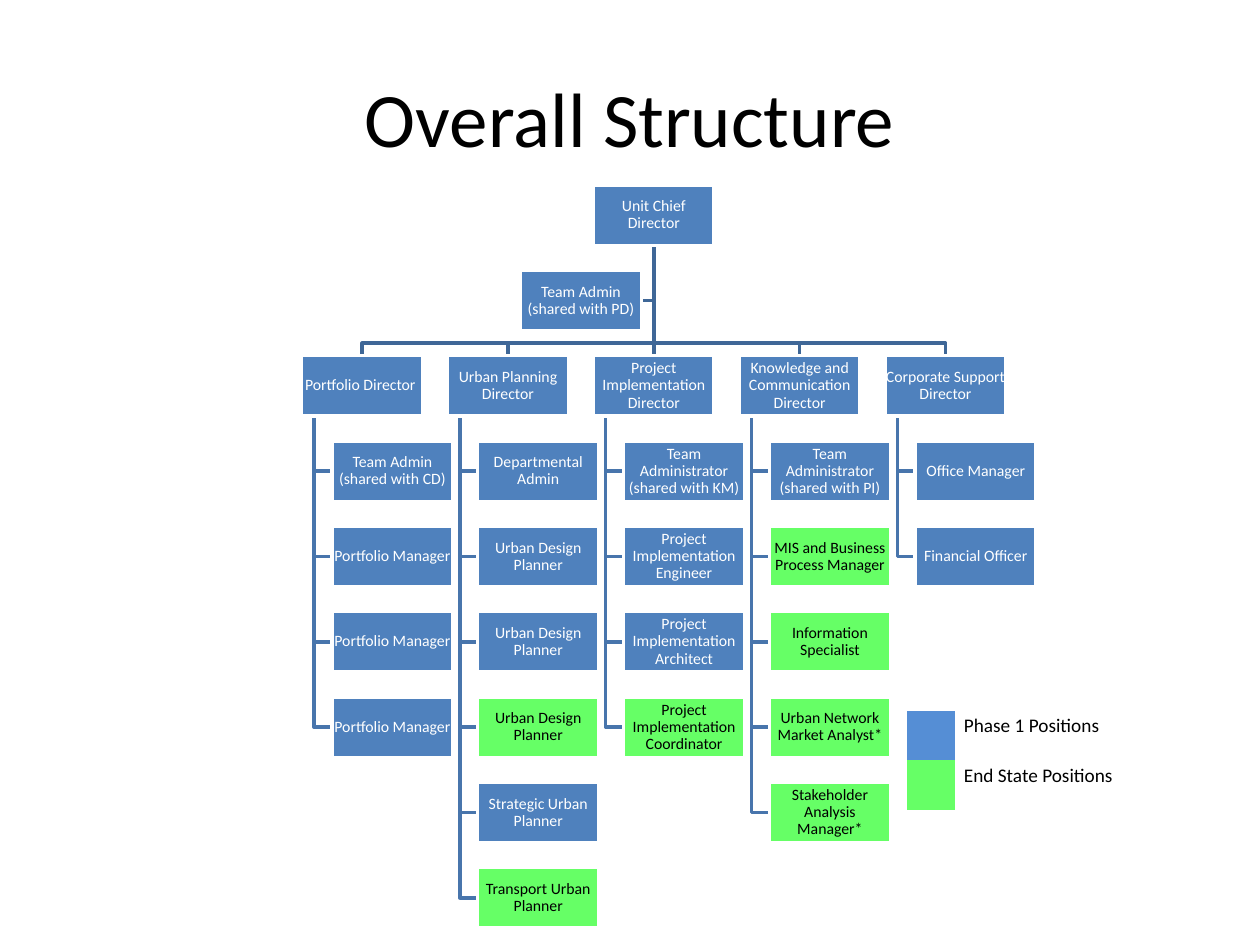
"""Build the organisation chart slide of the overall structure."""
from dataclasses import dataclass
from itertools import pairwise
from typing import NamedTuple

from lxml import etree
from pptx import Presentation
from pptx import util as u
from pptx.dml.color import RGBColor
from pptx.enum import shapes, text
from pptx.oxml import ns


@dataclass(frozen=True)
class Theme:
    font: str = "Calibri"
    title_size: float = 44
    box_size: float = 9
    legend_size: float = 11
    line_width: float = 2
    dark: str = "000000"
    light: str = "FFFFFF"
    phase_one: str = "4F81BD"
    end_state: str = "66FF66"
    legend_phase_one: str = "558ED5"
    upper_line: str = "3F6797"
    lower_line: str = "4875AC"
    plain_table: str = "{2D5ABB26-0587-4C30-8999-92F81FD0307C}"


class Team(NamedTuple):
    director: str
    staff: list
    end_state: set


TEAMS = [
    Team("Portfolio Director ",
         ["Team Admin (shared with CD)"] + ["Portfolio Manager"] * 3, set()),
    Team("Urban Planning Director",
         ["Departmental Admin"] + ["Urban Design Planner"] * 3
         + ["Strategic Urban Planner", "Transport Urban Planner"], {3, 5}),
    Team("Project Implementation Director",
         ["Team Administrator (shared with KM)", "Project Implementation Engineer",
          "Project Implementation Architect", "Project Implementation Coordinator"], {3}),
    Team("Knowledge and Communication Director",
         ["Team Administrator (shared with PI)", "MIS and Business Process Manager",
          "Information Specialist", "Urban Network Market Analyst*",
          "Stakeholder Analysis Manager*"], {1, 2, 3, 4}),
    Team("Corporate Support Director", ["Office Manager", "Financial Officer"], set()),
]

BOX_WIDTH, BOX_HEIGHT = 2.44, 1.22
CHART_LEFT, CHART_TOP = 6.08, 3.73
COLUMN_STEP, ROW_STEP = 2.94, 1.72
STAFF_INDENT, TRUNK_INDENT, BUS_GAP = 0.61, 0.25, 0.25
ASSISTANT_LEFT = 10.49
DIRECTOR_ROW = 2


def column_left(column):
    return CHART_LEFT + column * COLUMN_STEP


def row_top(row):
    return CHART_TOP + row * ROW_STEP


class SlideBuilder:
    def __init__(self, slide, theme):
        self.slide = slide
        self.theme = theme

    def set_text(self, frame, content, size, color, alignment, spacing=1.0):
        frame.text = content
        frame.word_wrap = True
        paragraph = frame.paragraphs[0]
        paragraph.alignment = alignment
        paragraph.line_spacing = spacing
        font = paragraph.runs[0].font
        font.name = self.theme.font
        font.size = u.Pt(size)
        font.color.rgb = RGBColor.from_string(color)

    def title(self, content, left, top, width, height):
        shape = self.slide.shapes.add_textbox(*map(u.Cm, (left, top, width, height)))
        self.set_text(shape.text_frame, content, self.theme.title_size, self.theme.dark,
                      text.PP_ALIGN.CENTER)
        shape.text_frame.vertical_anchor = text.MSO_ANCHOR.MIDDLE

    def box(self, content, left, top, end_state=False):
        theme = self.theme
        shape = self.slide.shapes.add_shape(
            shapes.MSO_SHAPE.RECTANGLE, *map(u.Cm, (left, top, BOX_WIDTH, BOX_HEIGHT)))
        shape.shadow.inherit = False
        shape.fill.solid()
        shape.fill.fore_color.rgb = RGBColor.from_string(
            theme.end_state if end_state else theme.phase_one)
        self.outline(shape.line, theme.light)
        frame = shape.text_frame
        frame.margin_left = frame.margin_right = u.Cm(0.02)
        frame.margin_top = frame.margin_bottom = u.Cm(0.02)
        frame.vertical_anchor = text.MSO_ANCHOR.MIDDLE
        self.set_text(frame, content, theme.box_size,
                      theme.dark if end_state else theme.light, text.PP_ALIGN.CENTER, 0.9)

    def outline(self, line, color):
        line.color.rgb = RGBColor.from_string(color)
        line.width = u.Pt(self.theme.line_width)

    def elbow(self, points, color):
        start, *rest = [(u.Cm(x), u.Cm(y)) for x, y in points]
        builder = self.slide.shapes.build_freeform(*start)
        builder.add_line_segments(rest, close=False)
        shape = builder.convert_to_shape()
        shape.shadow.inherit = False
        shape.fill.background()
        self.outline(shape.line, color)

    def straight(self, points, color):
        for start, end in pairwise(points):
            connector = self.slide.shapes.add_connector(
                shapes.MSO_CONNECTOR.STRAIGHT, *map(u.Cm, start + end))
            self.outline(connector.line, color)
            etree.SubElement(connector._element.spPr, ns.qn("a:effectLst"))

    def legend(self, entries, left, top, widths, row_height):
        table = self.slide.shapes.add_table(
            len(entries), len(widths), u.Cm(left), u.Cm(top),
            u.Cm(sum(widths)), u.Cm(row_height * len(entries))).table
        table.first_row = table.horz_banding = False
        table._tbl.tblPr.find(ns.qn("a:tableStyleId")).text = self.theme.plain_table
        for column, width in zip(table.columns, widths):
            column.width = u.Cm(width)
        for row, (label, color) in enumerate(entries):
            table.rows[row].height = u.Cm(row_height)
            swatch, caption = table.cell(row, 0), table.cell(row, 1)
            for cell in (swatch, caption):
                cell.margin_left = cell.margin_right = u.Cm(0.18)
                cell.margin_top = cell.margin_bottom = 0
            swatch.text_frame.paragraphs[0].font.size = u.Pt(self.theme.legend_size)
            swatch.fill.solid()
            swatch.fill.fore_color.rgb = RGBColor.from_string(color)
            caption.fill.background()
            self.set_text(caption.text_frame, label, self.theme.legend_size,
                          self.theme.dark, text.PP_ALIGN.LEFT, 1.15)


def draw_lines(builder, theme):
    center = column_left(len(TEAMS) // 2) + BOX_WIDTH / 2
    chief_bottom = row_top(0) + BOX_HEIGHT
    director_top = row_top(DIRECTOR_ROW)
    bus = director_top - BUS_GAP
    assistant_middle = row_top(1) + BOX_HEIGHT / 2
    builder.elbow([(center, chief_bottom), (center, assistant_middle),
                   (ASSISTANT_LEFT + BOX_WIDTH, assistant_middle)], theme.upper_line)
    for column, team in enumerate(TEAMS):
        left = column_left(column)
        middle = left + BOX_WIDTH / 2
        if column == len(TEAMS) // 2:
            builder.straight([(center, chief_bottom), (center, director_top)],
                             theme.upper_line)
        else:
            builder.elbow([(center, chief_bottom), (center, bus), (middle, bus),
                           (middle, director_top)], theme.upper_line)
        trunk = left + TRUNK_INDENT
        for row in range(len(team.staff)):
            branch = row_top(DIRECTOR_ROW + 1 + row) + BOX_HEIGHT / 2
            builder.elbow([(trunk, director_top + BOX_HEIGHT), (trunk, branch),
                           (left + STAFF_INDENT, branch)], theme.lower_line)


def draw_boxes(builder):
    builder.box("Unit Chief Director", column_left(len(TEAMS) // 2), row_top(0))
    builder.box("Team Admin (shared with PD)", ASSISTANT_LEFT, row_top(1))
    for column, team in enumerate(TEAMS):
        left = column_left(column)
        builder.box(team.director, left, row_top(DIRECTOR_ROW))
        for row, position in enumerate(team.staff):
            builder.box(position, left + STAFF_INDENT, row_top(DIRECTOR_ROW + 1 + row),
                        row in team.end_state)


def main():
    theme = Theme()
    presentation = Presentation()
    presentation.slide_width, presentation.slide_height = u.Cm(25.4), u.Cm(19.05)
    slide = presentation.slides.add_slide(presentation.slide_layouts[6])
    builder = SlideBuilder(slide, theme)
    builder.title("Overall Structure", 1.27, 0.76, 22.86, 3.18)
    draw_lines(builder, theme)
    draw_boxes(builder)
    builder.legend([("Phase 1 Positions", theme.legend_phase_one),
                    ("End State Positions", theme.end_state)],
                   18.29, 14.33, (0.96, 5.28), 1)
    presentation.save("out.pptx")


if __name__ == "__main__":
    main()
